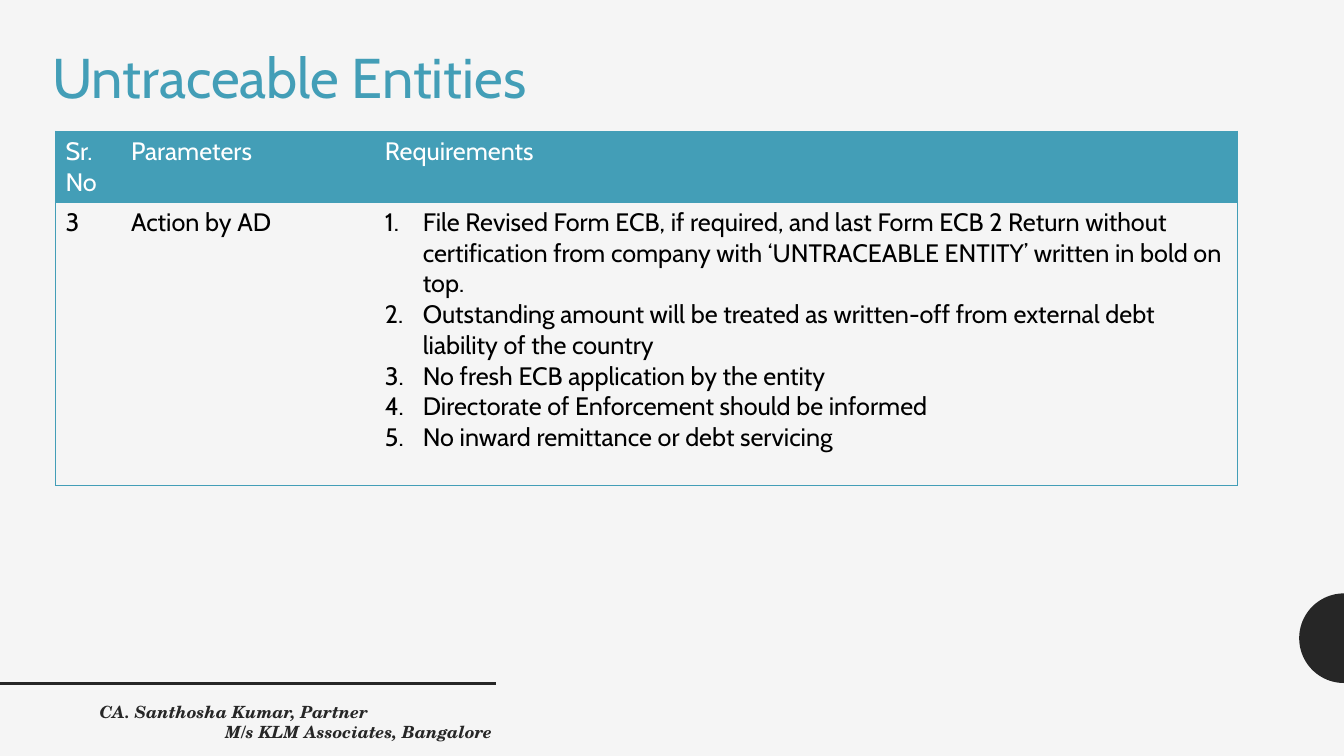
from dataclasses import dataclass
from math import cos, pi, sin

from lxml.etree import SubElement
from pptx import Presentation
from pptx.dml.color import RGBColor
from pptx.enum.shapes import MSO_CONNECTOR
from pptx.enum.text import MSO_ANCHOR, MSO_AUTO_SIZE, PP_ALIGN
from pptx.oxml.ns import qn
from pptx.util import Pt


@dataclass(frozen=True)
class Theme:
    background: str = "F5F5F5"
    accent: str = "439EB7"
    dark: str = "262626"
    black: str = "000000"
    white: str = "FFFFFF"
    font: str = "Cabin"
    footer_font: str = "TeX Gyre Schola"
    title_size: int = 40
    table_size: int = 18
    footer_size: int = 12


THEME = Theme()
SLIDE_WIDTH, SLIDE_HEIGHT = 960, 540
TITLE_ONLY_LAYOUT = 5
NO_STYLE_NO_GRID = "{2D5ABB26-0587-4C30-8999-92F81FD0307C}"
LIST_INDENT = 27
COLUMN_WIDTHS = (46.8, 181.4, 616.3)
ROW_HEIGHTS = (50.6, 202.2)

HEADINGS = ("Sr. No", "Parameters", "Requirements")
REQUIREMENTS = (
    "File Revised Form ECB, if required, and last Form ECB 2 Return without "
    "certification from company with ‘UNTRACEABLE ENTITY’ written in bold on top.",
    "Outstanding amount will be treated as written-off from external debt "
    "liability of the country",
    "No fresh ECB application by the entity",
    "Directorate of Enforcement should be informed",
    "No inward remittance or debt servicing",
)
ROWS = (
    tuple((heading,) for heading in HEADINGS),
    (("3",), ("Action by AD",), REQUIREMENTS),
)
# Each footer line with its left indent
FOOTER_LINES = (
    ("CA. Santhosha Kumar, Partner", 4.3),
    ("M/s KLM Associates, Bangalore", 94),
)


def color(value):
    return RGBColor.from_string(value)


def add_run(paragraph, text, size, fill, font=THEME.font, emphasis=False):
    run = paragraph.add_run()
    run.text = text
    run.font.name = font
    run.font.size = Pt(size)
    run.font.color.rgb = color(fill)
    run.font.bold = run.font.italic = emphasis


def add_paragraphs(text_frame, count):
    for _ in range(count - 1):
        text_frame.add_paragraph()
    return text_frame.paragraphs


def set_indent(paragraph, left, first_line=0):
    properties = paragraph._p.get_or_add_pPr()
    properties.set("marL", str(Pt(left)))
    properties.set("indent", str(Pt(first_line)))
    return properties


def add_title(slide, text, left, top, width, height):
    title = slide.shapes.title
    title.left, title.top, title.width, title.height = map(Pt, (left, top, width, height))
    text_frame = title.text_frame
    text_frame.word_wrap = False
    text_frame.auto_size = MSO_AUTO_SIZE.SHAPE_TO_FIT_TEXT
    text_frame.vertical_anchor = MSO_ANCHOR.TOP
    paragraph = text_frame.paragraphs[0]
    paragraph.alignment = PP_ALIGN.LEFT
    add_run(paragraph, text, THEME.title_size, THEME.accent)


def add_half_disc(slide, right, center_y, radius, steps=48):
    """Draw the left half of a disc, its straight side at right."""
    angles = [pi / 2 + pi * step / steps for step in range(steps + 1)]
    points = [
        (Pt(right + radius * cos(angle)), Pt(center_y + radius * sin(angle)))
        for angle in angles
    ]
    builder = slide.shapes.build_freeform(*points[0])
    builder.add_line_segments(points[1:], close=True)
    shape = builder.convert_to_shape()
    shape.shadow.inherit = False
    shape.fill.solid()
    shape.fill.fore_color.rgb = color(THEME.dark)
    shape.line.fill.background()


def add_cell_border(cell, sides):
    """Rule the given sides, a subset of LRTB in that order."""
    properties = cell._tc.get_or_add_tcPr()
    for side in sides:
        line = SubElement(properties, qn(f"a:ln{side}"), w=str(Pt(0.5)))
        fill = SubElement(line, qn("a:solidFill"))
        SubElement(fill, qn("a:srgbClr"), val=THEME.accent)


def fill_cell(cell, texts, is_header):
    paragraphs = add_paragraphs(cell.text_frame, len(texts))
    for paragraph, text in zip(paragraphs, texts):
        if len(texts) > 1:
            properties = set_indent(paragraph, LIST_INDENT, -LIST_INDENT)
            SubElement(properties, qn("a:buAutoNum"), type="arabicPeriod")
        add_run(paragraph, text, THEME.table_size, THEME.white if is_header else THEME.black)
    if is_header:
        cell.fill.solid()
        cell.fill.fore_color.rgb = color(THEME.accent)
    else:
        cell.fill.background()


def add_requirements_table(slide, left, top):
    frame = slide.shapes.add_table(
        len(ROWS), len(HEADINGS), Pt(left), Pt(top),
        Pt(sum(COLUMN_WIDTHS)), Pt(sum(ROW_HEIGHTS)),
    )
    table = frame.table
    table.first_row = table.horz_banding = False
    table._tbl.tblPr.find(qn("a:tableStyleId")).text = NO_STYLE_NO_GRID
    for column, width in zip(table.columns, COLUMN_WIDTHS):
        column.width = Pt(width)
    for row, height in zip(table.rows, ROW_HEIGHTS):
        row.height = Pt(height)
    last_row, last_column = len(ROWS) - 1, len(HEADINGS) - 1
    for row_index, row in enumerate(ROWS):
        for column_index, texts in enumerate(row):
            cell = table.cell(row_index, column_index)
            edges = {
                "L": column_index == 0,
                "R": column_index == last_column,
                "T": True,
                "B": row_index == last_row,
            }
            add_cell_border(cell, [side for side, ruled in edges.items() if ruled])
            fill_cell(cell, texts, is_header=row_index == 0)


def add_footer(slide, left, top, width, height):
    """Place the signature in the box, under a rule from the slide's edge."""
    rule_y = Pt(top - 9.5)
    rule = slide.shapes.add_connector(
        MSO_CONNECTOR.STRAIGHT, 0, rule_y, Pt(left + width - 6), rule_y
    )
    rule.line.color.rgb = color(THEME.dark)
    rule.line.width = Pt(2)
    SubElement(rule._element.spPr, qn("a:effectLst"))

    box = slide.shapes.add_textbox(*map(Pt, (left, top, width, height)))
    box.text_frame.word_wrap = True
    paragraphs = add_paragraphs(box.text_frame, len(FOOTER_LINES))
    for paragraph, (text, indent) in zip(paragraphs, FOOTER_LINES):
        set_indent(paragraph, indent)
        add_run(paragraph, text, THEME.footer_size, THEME.dark, THEME.footer_font, emphasis=True)


def main():
    presentation = Presentation()
    presentation.slide_width = Pt(SLIDE_WIDTH)
    presentation.slide_height = Pt(SLIDE_HEIGHT)
    slide = presentation.slides.add_slide(presentation.slide_layouts[TITLE_ONLY_LAYOUT])
    slide.background.fill.solid()
    slide.background.fill.fore_color.rgb = color(THEME.background)
    add_half_disc(slide, SLIDE_WIDTH, 455.9, 32)
    add_title(slide, "Untraceable Entities", 30.2, 26.6, 361.4, 55.4)
    add_requirements_table(slide, 39.6, 93.6)
    add_footer(slide, 59.8, 497.5, 300.2, 28.8)
    presentation.save("out.pptx")


if __name__ == "__main__":
    main()
